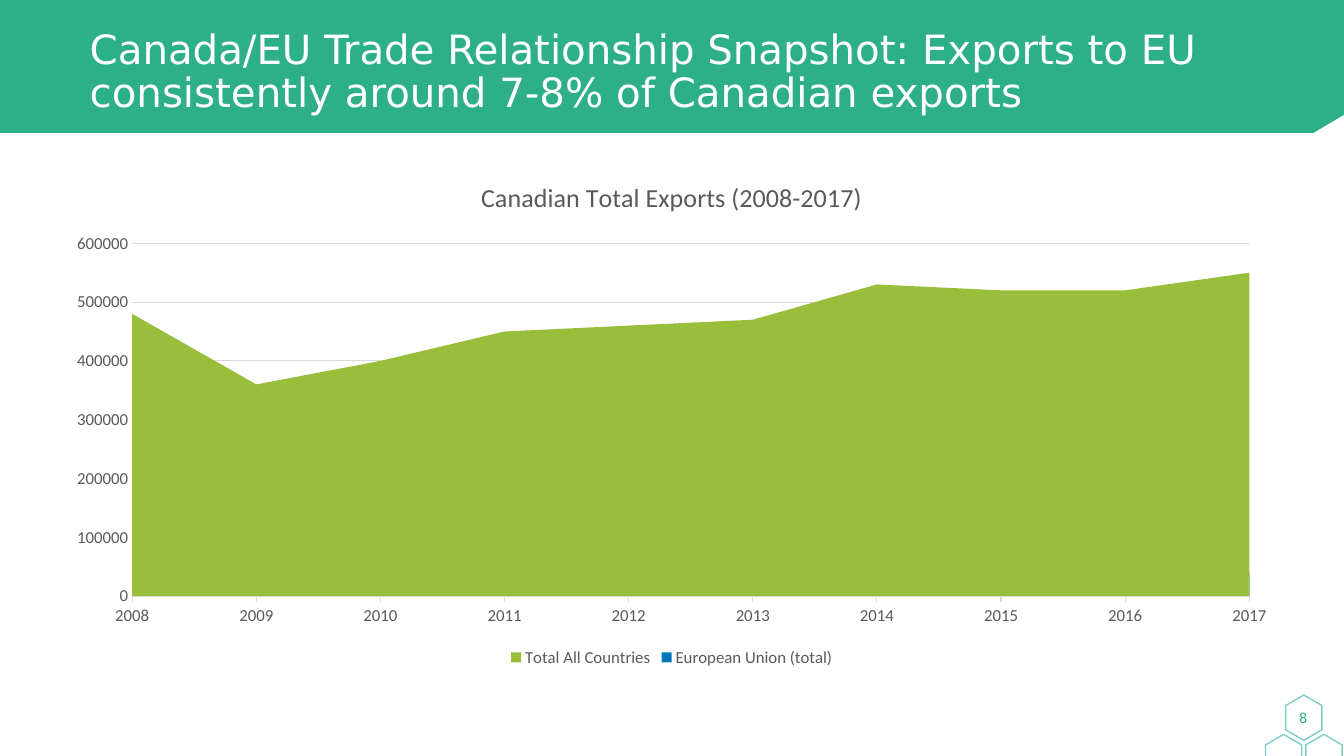
from typing import Any, NamedTuple

import lxml.etree
import pptx
import pptx.chart.data
import pptx.dml.color
import pptx.enum.chart
import pptx.enum.shapes
import pptx.enum.text
import pptx.oxml.ns
import pptx.util

Pt = pptx.util.Pt
RGB = pptx.dml.color.RGBColor
qn = pptx.oxml.ns.qn

GREEN = RGB(0x2D, 0xAF, 0x88)
TEAL = RGB(0x00, 0x99, 0x8D)
LIME = RGB(0x99, 0xBE, 0x3C)
BLUE = RGB(0x00, 0x76, 0xBB)
GREY = RGB(0x59, 0x59, 0x59)
PALE = RGB(0xD9, 0xD9, 0xD9)
WHITE = RGB(0xFF, 0xFF, 0xFF)

WIDE, HIGH = 960, 540


class Hex(NamedTuple):
    left: float
    top: float


class Series(NamedTuple):
    name: str
    color: RGB
    vals: list[int]


CELLS = [Hex(915.1, 499.7), Hex(929.5, 527.8), Hex(900.7, 527.8)]
YEARS = [str(year) for year in range(2008, 2018)]
TRADE = [
    Series("Total All Countries", LIME,
           [480000, 360000, 400000, 450000, 460000,
            470000, 530000, 520000, 520000, 550000]),
    Series("European Union (total)", BLUE,
           [40000, 30000, 30000, 40000, 40000,
            30000, 40000, 40000, 40000, 40000]),
]


def style(item: Any, **look: Any) -> None:
    for key, value in look.items():
        setattr(item, key, value)


def paint(font: Any, size: float, color: RGB, name: str = "Calibri") -> None:
    style(font, size=Pt(size), name=name, bold=False)
    font.color.rgb = color


def rule(line: Any) -> None:
    line.color.rgb = PALE
    line.width = Pt(0.75)


def add_hex(slide: Any, cell: Hex) -> None:
    shape = slide.shapes.add_shape(
        pptx.enum.shapes.MSO_SHAPE.HEXAGON,
        Pt(cell.left), Pt(cell.top), Pt(32.4), Pt(25.9))
    shape.rotation = 90
    shape.adjustments[0] = 0.29
    shape.shadow.inherit = False
    shape.fill.background()
    shape.line.color.rgb = TEAL
    shape.line.width = Pt(1)
    color = shape.line._ln.find(".//" + qn("a:srgbClr"))
    lxml.etree.SubElement(color, qn("a:alpha"), val="50000")


def add_band(slide: Any) -> None:
    pen = slide.shapes.build_freeform(0, 0, scale=Pt(1))
    pen.add_line_segments([(WIDE, 0), (WIDE, 82), (938, 95), (0, 95)])
    band = pen.convert_to_shape()
    band.shadow.inherit = False
    band.fill.solid()
    band.fill.fore_color.rgb = GREEN
    band.line.fill.background()


def set_title(slide: Any) -> None:
    title = slide.shapes.title
    style(title, left=Pt(56.9), top=Pt(13.7), width=Pt(846.7), height=Pt(77))
    frame = title.text_frame
    frame.text = ("Canada/EU Trade Relationship Snapshot: Exports to EU "
                  "consistently around 7-8% of Canadian exports")
    style(frame, word_wrap=True, auto_size=pptx.enum.text.MSO_AUTO_SIZE.NONE,
          vertical_anchor=pptx.enum.text.MSO_ANCHOR.MIDDLE)
    para = frame.paragraphs[0]
    style(para, alignment=pptx.enum.text.PP_ALIGN.LEFT, line_spacing=0.9)
    paint(para.font, 28.8, WHITE, "DejaVu Sans")
    # Bring the title in front of the band
    slide.shapes._spTree.append(title._element)


def add_trade(slide: Any) -> None:
    kinds = pptx.enum.chart
    data = pptx.chart.data.CategoryChartData()
    data.categories = YEARS
    for item in TRADE:
        data.add_series(item.name, item.vals)
    chart = slide.shapes.add_chart(
        kinds.XL_CHART_TYPE.AREA, Pt(37.4), Pt(113.8), Pt(884.9), Pt(365.8),
        data).chart
    chart.font.name = "Calibri"
    chart.font.size = Pt(10)

    # Heading and legend
    chart.has_title = True
    head = chart.chart_title
    head.include_in_layout = False
    head.text_frame.text = "Canadian Total Exports (2008-2017)"
    paint(head.text_frame.paragraphs[0].runs[0].font, 18.6, GREY)
    chart.has_legend = True
    style(chart.legend, position=kinds.XL_LEGEND_POSITION.BOTTOM,
          include_in_layout=False)
    paint(chart.legend.font, 12, GREY)

    # Areas
    for area, item in zip(chart.plots[0].series, TRADE):
        area.format.fill.solid()
        area.format.fill.fore_color.rgb = item.color
        area.format.line.fill.background()

    # Axes
    cats, vals = chart.category_axis, chart.value_axis
    for axis in (cats, vals):
        paint(axis.tick_labels.font, 12, GREY)
        style(axis, major_tick_mark=kinds.XL_TICK_MARK.NONE,
              minor_tick_mark=kinds.XL_TICK_MARK.NONE)
    cats.major_tick_mark = kinds.XL_TICK_MARK.OUTSIDE
    cats.has_major_gridlines = False
    rule(cats.format.line)
    style(vals, minimum_scale=0, maximum_scale=600000, major_unit=100000,
          has_major_gridlines=True)
    style(vals.tick_labels, number_format="0", number_format_is_linked=False)
    vals.format.line.fill.background()
    rule(vals.major_gridlines.format.line)
    for cross in vals._element.iter(qn("c:crossBetween")):
        cross.set("val", "midCat")


def add_page(slide: Any) -> None:
    box = slide.shapes.add_textbox(Pt(916.6), Pt(500.4), Pt(28.8), Pt(23.8))
    frame = box.text_frame
    style(frame, word_wrap=True, margin_left=0, margin_right=0,
          margin_top=0, margin_bottom=0,
          vertical_anchor=pptx.enum.text.MSO_ANCHOR.MIDDLE)
    frame.text = "8"
    para = frame.paragraphs[0]
    para.alignment = pptx.enum.text.PP_ALIGN.CENTER
    paint(para.font, 11, GREEN)


def main() -> None:
    deck = pptx.Presentation()
    style(deck, slide_width=Pt(WIDE), slide_height=Pt(HIGH))
    slide = deck.slides.add_slide(deck.slide_layouts[5])
    add_band(slide)
    for cell in CELLS:
        add_hex(slide, cell)
    set_title(slide)
    add_trade(slide)
    add_page(slide)
    deck.save("out.pptx")


if __name__ == "__main__":
    main()
